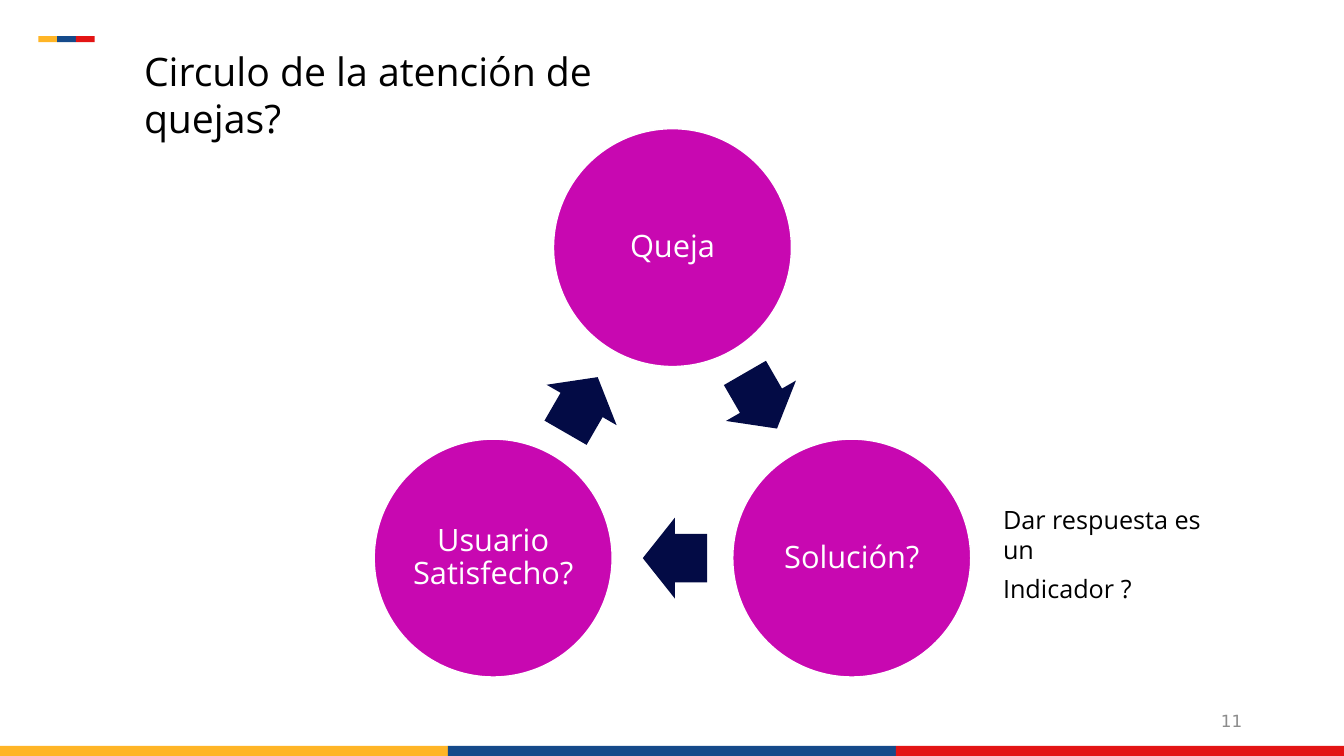
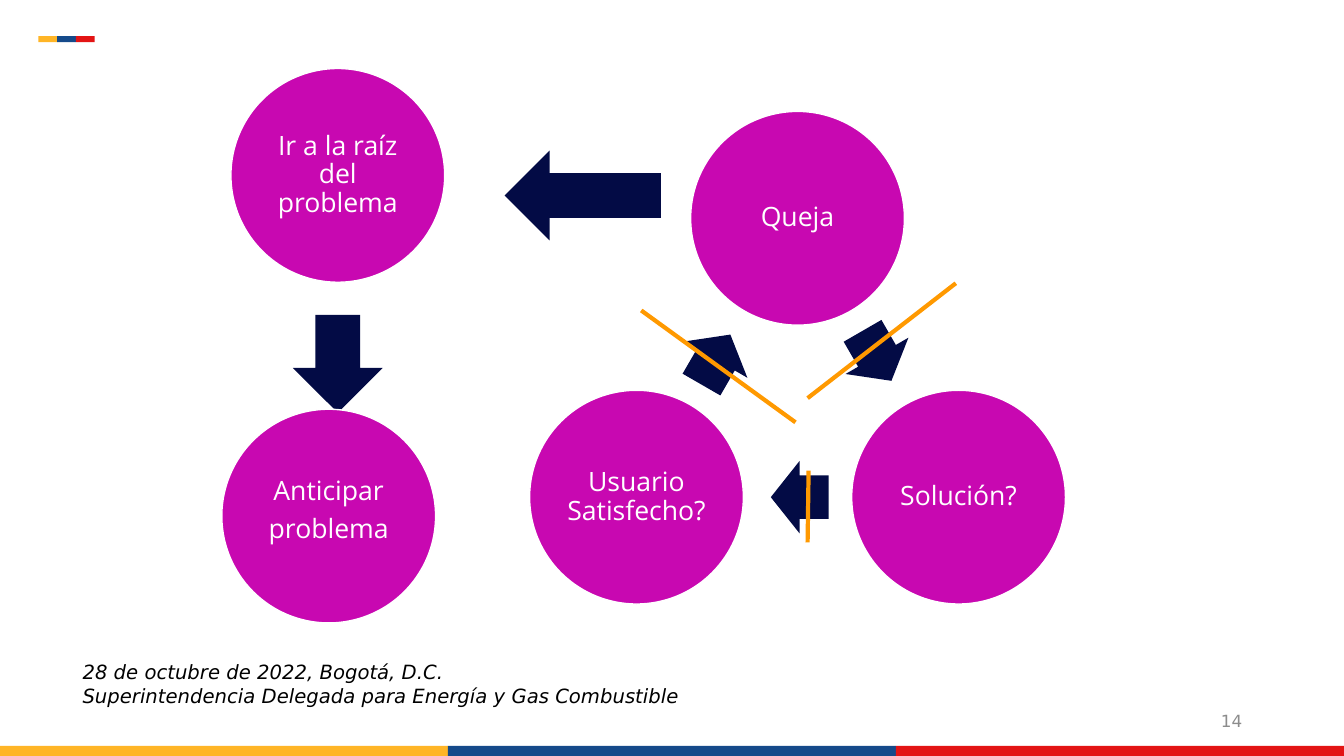
from math import cos, radians, sin

from lxml import etree
from pptx import Presentation
from pptx.dml.color import RGBColor
from pptx.enum.shapes import MSO_CONNECTOR, MSO_SHAPE
from pptx.enum.text import MSO_ANCHOR as ANCHOR, PP_ALIGN as ALIGN
from pptx.oxml.ns import qn
from pptx.util import Inches, Pt

YELLOW = RGBColor(0xFF, 0xB5, 0x26)
BLUE = RGBColor(0x15, 0x4A, 0x8A)
RED = RGBColor(0xE3, 0x14, 0x14)
MAGENTA = RGBColor(0xC8, 0x08, 0xB1)
NAVY = RGBColor(0x03, 0x0B, 0x45)
ORANGE = RGBColor(0xFF, 0x99, 0x00)
GRAY = RGBColor(0x8C, 0x8C, 0x8C)
BLACK = RGBColor(0, 0, 0)
WHITE = RGBColor(0xFF, 0xFF, 0xFF)

WIDTH, HEIGHT = 13.33, 7.5
BODY_FONT = "Open Sans"
FOOTER_FONT = "DejaVu Sans"


class Deck:
    def __init__(self):
        self.prs = Presentation()
        self.prs.slide_width = Inches(WIDTH)
        self.prs.slide_height = Inches(HEIGHT)
        self.s = None

    def new_slide(self, number):
        self.s = self.prs.slides.add_slide(self.prs.slide_layouts[6])
        self.flag(0.38, 0.36, 0.56, 0.06)
        self.flag(0, 7.4, WIDTH, 0.1)
        self.text(9.42, 6.95, 3, 0.4, [str(number)], 12, FOOTER_FONT, GRAY,
                  align=ALIGN.RIGHT)

    def shape(self, kind, x, y, w, h, fill, line=None):
        sp = self.s.shapes.add_shape(kind, Inches(x), Inches(y), Inches(w), Inches(h))
        sp.shadow.inherit = False
        sp.fill.solid()
        sp.fill.fore_color.rgb = fill
        if line is None:
            sp.line.fill.background()
        else:
            sp.line.color.rgb = line
            sp.line.width = Pt(1)
        return sp

    def flag(self, x, y, w, h):
        for i, color in enumerate((YELLOW, BLUE, RED)):
            self.shape(MSO_SHAPE.RECTANGLE, x + i * w / 3, y, w / 3, h, color)

    def add_lines(self, tf, lines, size, font, color, align=ALIGN.LEFT, italic=False,
                  gap=0, spacing=None, indent=0):
        tf.word_wrap = True
        for i, line in enumerate(lines):
            p = tf.add_paragraph() if i else tf.paragraphs[0]
            p.alignment = align
            if i:
                p.space_before = Pt(gap)
            if spacing:
                p.line_spacing = spacing
            if indent:
                p._p.get_or_add_pPr().set("marL", str(Inches(indent)))
            r = p.add_run()
            r.text = line
            r.font.size = Pt(size)
            r.font.name = font
            r.font.italic = italic
            r.font.color.rgb = color

    def text(self, x, y, w, h, lines, size, font=BODY_FONT, color=BLACK,
             anchor=ANCHOR.MIDDLE, **style):
        sp = self.s.shapes.add_textbox(Inches(x), Inches(y), Inches(w), Inches(h))
        sp.text_frame.vertical_anchor = anchor
        self.add_lines(sp.text_frame, lines, size, font, color, **style)

    def circle(self, cx, cy, d, lines, size, lift=0):
        sp = self.shape(MSO_SHAPE.OVAL, cx - d / 2, cy - d / 2, d, d, MAGENTA, WHITE)
        tf = sp.text_frame
        tf.margin_left = tf.margin_right = tf.margin_top = Inches(0.03)
        tf.margin_bottom = Inches(0.03 + 2 * lift)
        tf.vertical_anchor = ANCHOR.MIDDLE
        self.add_lines(tf, lines, size, BODY_FONT, WHITE, align=ALIGN.CENTER,
                       gap=0.35 * size, spacing=0.9)

    def arrow(self, cx, cy, length, width, angle, shaft=0.5):
        sp = self.shape(MSO_SHAPE.RIGHT_ARROW, cx - length / 2, cy - width / 2,
                        length, width, NAVY)
        sp.adjustments[0] = shaft
        sp.adjustments[1] = 0.5
        sp.rotation = angle

    def cycle(self, cx, cy, d, labels, size):
        radius = 0.87 * d
        step = 360 / len(labels)
        for i, label in enumerate(labels):
            node = radians(-90 + i * step)
            self.circle(cx + radius * cos(node), cy + radius * sin(node), d, [label], size)
            side = node + radians(step / 2)
            reach = radius * cos(radians(step / 2))
            turn = side + radians(90)
            back = 0.01 * d
            self.arrow(cx + reach * cos(side) - back * cos(turn),
                       cy + reach * sin(side) - back * sin(turn),
                       0.27 * d, 0.34 * d, step / 2 + i * step, shaft=0.6)

    def strike(self, x1, y1, x2, y2):
        ln = self.s.shapes.add_connector(MSO_CONNECTOR.STRAIGHT, Inches(x1), Inches(y1),
                                         Inches(x2), Inches(y2))
        ln.line.color.rgb = ORANGE
        ln.line.width = Pt(3)
        etree.SubElement(ln._element.spPr, qn("a:effectLst"))


def main():
    deck = Deck()
    stages = ["Queja", "Solución?", "Usuario Satisfecho?"]

    deck.new_slide(11)
    deck.cycle(6.67, 4.51, 2.36, stages, 22)
    deck.text(1.33, 0.65, 6.02, 0.57, ["Circulo de la atención de quejas?"], 28)
    deck.text(9.85, 5.1, 2.47, 0.79, ["Dar respuesta es un", "Indicador ?"], 18, gap=6)

    deck.new_slide(14)
    deck.text(0.47, 6.5, 9.95, 0.57,
              ["28 de octubre de 2022, Bogotá, D.C.",
               "Superintendencia Delegada para Energía y Gas Combustible"],
              14, FOOTER_FONT, anchor=ANCHOR.TOP, italic=True, indent=0.25)
    diameter, size = 2.12, 19
    deck.cycle(7.91, 4.01, diameter, stages, size)
    for ends in ((6.36, 3.08, 7.89, 4.19), (9.48, 2.81, 8.01, 3.95),
                 (8.02, 4.67, 8.01, 5.38)):
        deck.strike(*ends)
    deck.arrow(5.78, 1.94, 1.55, 0.89, 180)
    deck.circle(3.35, 1.74, diameter, ["Ir a la raíz del problema"], size)
    deck.arrow(3.35, 3.61, 0.97, 0.89, 90)
    deck.circle(3.26, 5.12, diameter, ["Anticipar", "problema"], size, lift=0.05)

    deck.prs.save("out.pptx")


if __name__ == "__main__":
    main()
